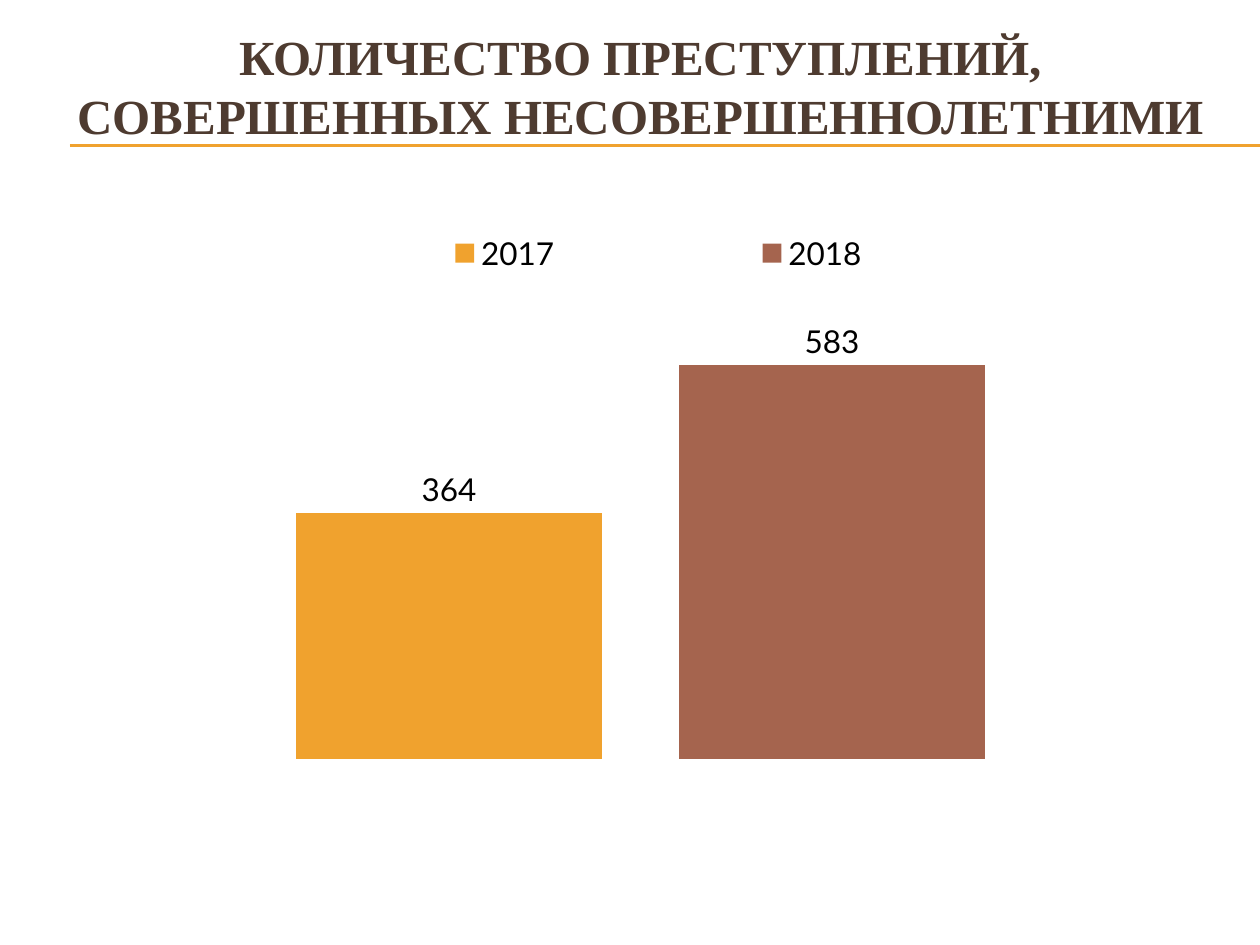
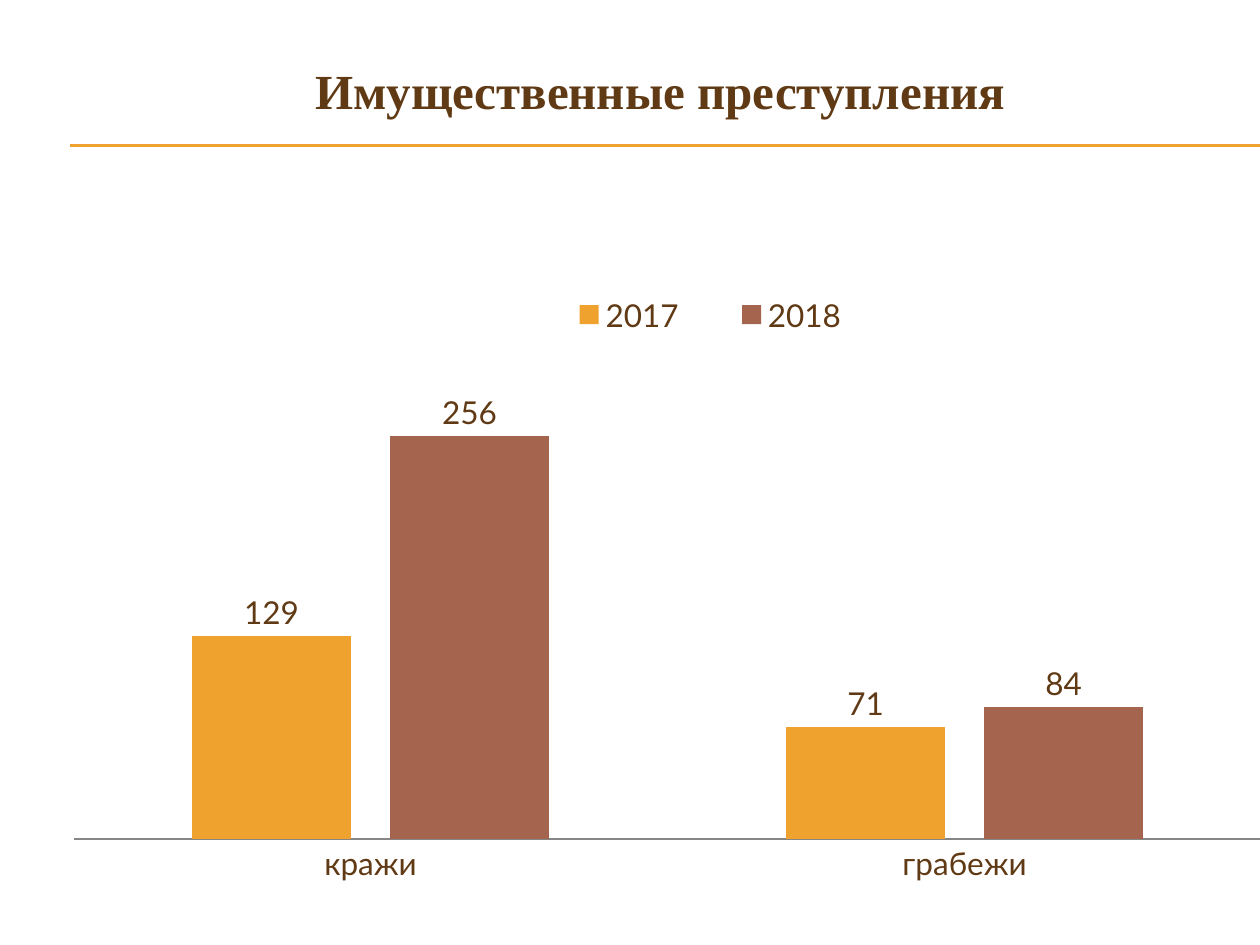
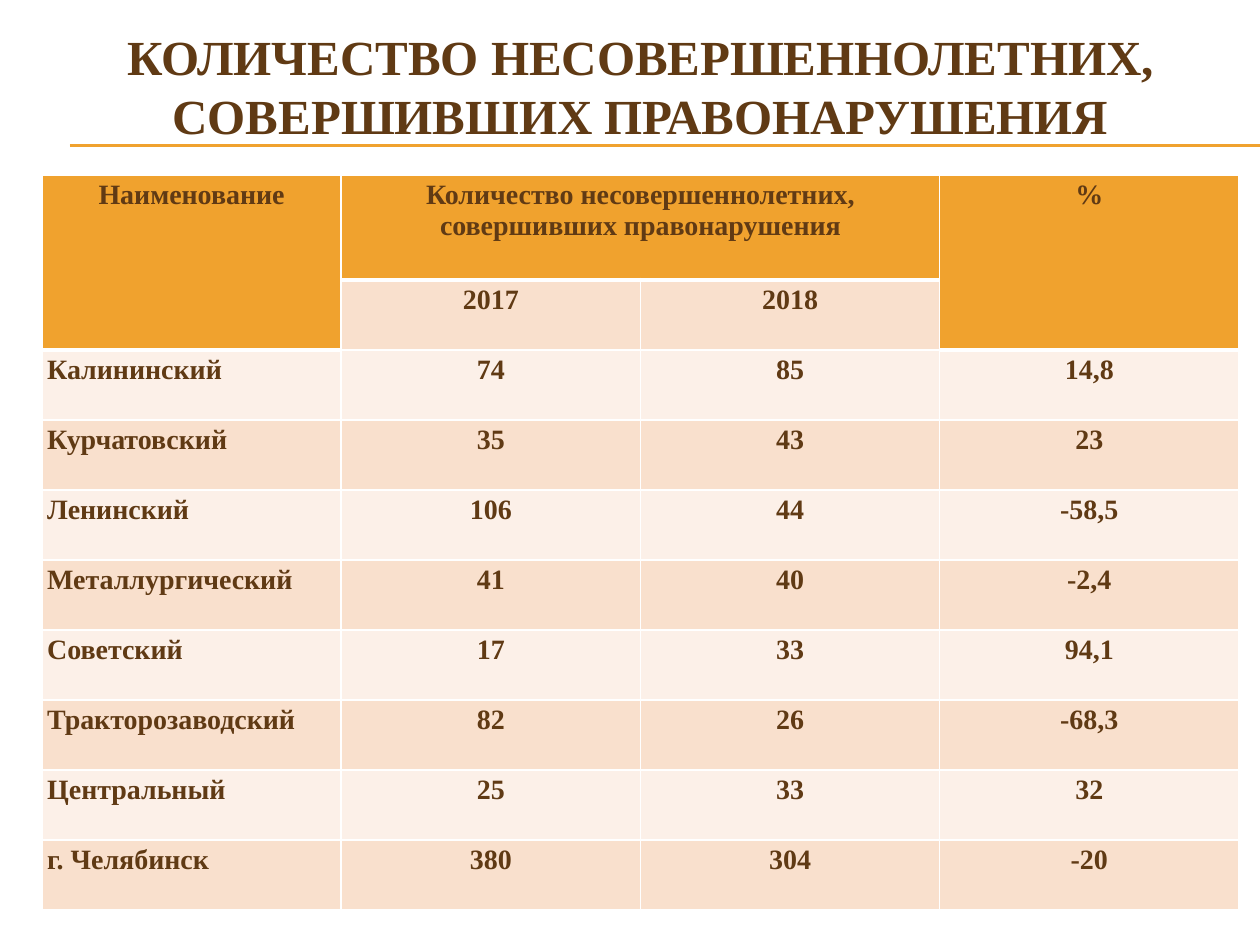
import pptx
import pptx.chart.data
import pptx.dml.color
import pptx.enum.chart
import pptx.enum.shapes
import pptx.enum.text
import pptx.oxml
import pptx.oxml.ns
import pptx.util

Pt = pptx.util.Pt
qn = pptx.oxml.ns.qn
ALIGN = pptx.enum.text.PP_ALIGN
ANCHOR = pptx.enum.text.MSO_ANCHOR
NS = pptx.oxml.ns.nsdecls("a", "c")

ORANGE, RUST, BROWN, DARK = "F0A22E", "A5644E", "603A14", "4E3B30"
BLACK, WHITE, GRAY = "000000", "FFFFFF", "868686"
BANDS = ("FCF0E8", "F9E0CD")
LEFT, WIDTH, RIGHT = 24, 684, 720
TITLE_BOX = (LEFT, 15, WIDTH, 68)
YEARS = ("2017", "2018")


def rgb(value):
    return pptx.dml.color.RGBColor.from_string(value)


def place(parent, index, box, inner=False):
    for old in parent.findall(qn("c:layout")):
        parent.remove(old)
    target = '<c:layoutTarget val="inner"/>' if inner else ""
    modes = "".join(f'<c:{k}Mode val="edge"/>' for k in "xy")
    sizes = "".join(f'<c:{k} val="{v}"/>' for k, v in zip("xywh", box))
    parent.insert(index, pptx.oxml.parse_xml(
        f"<c:layout {NS}><c:manualLayout>{target}{modes}{sizes}</c:manualLayout></c:layout>"))


class Deck:
    """Holds the presentation, its style and the current slide."""

    def __init__(self):
        self.prs = pptx.Presentation()
        self.prs.slide_width, self.prs.slide_height = Pt(720), Pt(540)

    def slide(self):
        self.s = self.prs.slides.add_slide(self.prs.slide_layouts[6])
        for y in (82.8, 83.5):
            self.rule(40, y, RIGHT)

    def rule(self, x1, y, x2):
        line = self.s.shapes.add_connector(
            pptx.enum.shapes.MSO_CONNECTOR.STRAIGHT, Pt(x1), Pt(y), Pt(x2), Pt(y))
        line.line.color.rgb = rgb(ORANGE)
        line.line.width = Pt(0.75)
        line._element.spPr.append(pptx.oxml.parse_xml(f"<a:effectLst {NS}/>"))

    def font(self, font, size, color, name="Times New Roman", bold=True):
        font.size, font.name, font.bold = Pt(size), name, bold
        font.color.rgb = rgb(color)

    def title(self, text, box=TITLE_BOX, color=BROWN):
        tf = self.s.shapes.add_textbox(*map(Pt, box)).text_frame
        tf.word_wrap = True
        tf.vertical_anchor = ANCHOR.MIDDLE
        p = tf.paragraphs[0]
        p.text = text
        p.alignment = ALIGN.CENTER
        self.font(p.font, 28, color)

    def chart(self, box, cats, series, top, plot_box, legend_box, color):
        data = pptx.chart.data.CategoryChartData()
        data.categories = cats
        for year, values in zip(YEARS, series):
            data.add_series(year, values)
        chart = self.s.shapes.add_chart(
            pptx.enum.chart.XL_CHART_TYPE.COLUMN_CLUSTERED, *map(Pt, box), data).chart
        chart.has_title = False
        self.font(chart.font, 18, color, "Lato", False)
        plot = chart.plots[0]
        plot.gap_width, plot.overlap, plot.vary_by_categories = 150, -25, False
        plot.has_data_labels = True
        labels = plot.data_labels
        labels.show_value = True
        labels.position = pptx.enum.chart.XL_LABEL_POSITION.OUTSIDE_END
        self.font(labels.font, 18, color, "Lato", False)
        for ser, fill in zip(plot.series, (ORANGE, RUST)):
            ser.format.fill.solid()
            ser.format.fill.fore_color.rgb = rgb(fill)
        axis = chart.value_axis
        axis.minimum_scale, axis.maximum_scale = 0, top
        axis.has_major_gridlines = axis.visible = False
        chart.has_legend = True
        legend = chart.legend
        legend.position = pptx.enum.chart.XL_LEGEND_POSITION.TOP
        legend.include_in_layout = False
        self.font(legend.font, 18, color, "Lato", False)
        place(legend._element, 1, legend_box)
        place(chart._chartSpace.chart.plotArea, 0, plot_box, inner=True)
        return chart

    def borders(self, cell, bottom):
        tc_pr = cell._tc.get_or_add_tcPr()
        for i, side in enumerate("LRTB"):
            width = Pt(bottom if side == "B" else 1)
            tc_pr.insert(i, pptx.oxml.parse_xml(
                f'<a:ln{side} {NS} w="{width}"><a:solidFill><a:srgbClr val="{WHITE}"/>'
                f"</a:solidFill></a:ln{side}>"))

    def table(self, rows, x, y, w, heights, merges):
        cols = len(rows[0])
        table = self.s.shapes.add_table(
            len(rows), cols, Pt(x), Pt(y), Pt(w), Pt(sum(heights))).table
        table.first_row = table.horz_banding = False
        for col in table.columns:
            col.width = Pt(w / cols)
        for r, (row, height) in enumerate(zip(rows, heights)):
            table.rows[r].height = Pt(height)
            for c, text in enumerate(row):
                cell = table.cell(r, c)
                header = r == 0 or (r == 1 and not text)
                cell.fill.solid()
                cell.fill.fore_color.rgb = rgb(ORANGE if header else BANDS[r % 2])
                self.borders(cell, 3 if header else 1)
                cell.margin_left = cell.margin_right = Pt(3)
                cell.margin_top = cell.margin_bottom = Pt(2.7)
                p = cell.text_frame.paragraphs[0]
                p.text = text
                p.alignment = ALIGN.JUSTIFY if c == 0 and r > 1 else ALIGN.CENTER
                self.font(p.font, 16, BROWN)
        for first, last in merges:
            table.cell(*first).merge(table.cell(*last))


def main():
    d = Deck()

    d.slide()
    d.title("КОЛИЧЕСТВО ПРЕСТУПЛЕНИЙ, СОВЕРШЕННЫХ НЕСОВЕРШЕННОЛЕТНИМИ", color=DARK)
    chart = d.chart((LEFT, 122.4, WIDTH, 317.5), ["1"], [(364,), (583,)], 700,
                    (0.02, 0.13, 0.96, 0.85), (0.18, 0.02, 0.67, 0.1), BLACK)
    chart.category_axis.visible = False

    d.slide()
    chart = d.chart((28, 160.5, 700, 350.6), ["кражи", "грабежи"],
                    [(129, 71), (256, 84)], 300,
                    (0.02, 0.14, 0.97, 0.77), (0.39, 0.01, 0.3, 0.09), BROWN)
    axis = chart.category_axis
    axis.major_tick_mark = pptx.enum.chart.XL_TICK_MARK.NONE
    axis.format.line.color.rgb = rgb(GRAY)
    axis.format.line.width = Pt(1)
    d.font(axis.tick_labels.font, 18, BROWN, "Lato", False)
    d.title("Имущественные преступления", (48.5, 31, 657.5, 41))

    d.slide()
    d.title("КОЛИЧЕСТВО НЕСОВЕРШЕННОЛЕТНИХ, СОВЕРШИВШИХ ПРАВОНАРУШЕНИЯ")
    rows = [
        ("Наименование", "Количество несовершеннолетних, совершивших правонарушения", "", "%"),
        ("", *YEARS, ""),
        ("Калининский", "74", "85", "14,8"),
        ("Курчатовский", "35", "43", "23"),
        ("Ленинский", "106", "44", "-58,5"),
        ("Металлургический", "41", "40", "-2,4"),
        ("Советский", "17", "33", "94,1"),
        ("Тракторозаводский", "82", "26", "-68,3"),
        ("Центральный", "25", "33", "32"),
        ("г. Челябинск", "380", "304", "-20"),
    ]
    d.table(rows, LEFT, 100, WIDTH, [60] + [40] * 9,
            [((0, 0), (1, 0)), ((0, 1), (0, 2)), ((0, 3), (1, 3))])

    d.prs.save("out.pptx")


if __name__ == "__main__":
    main()
